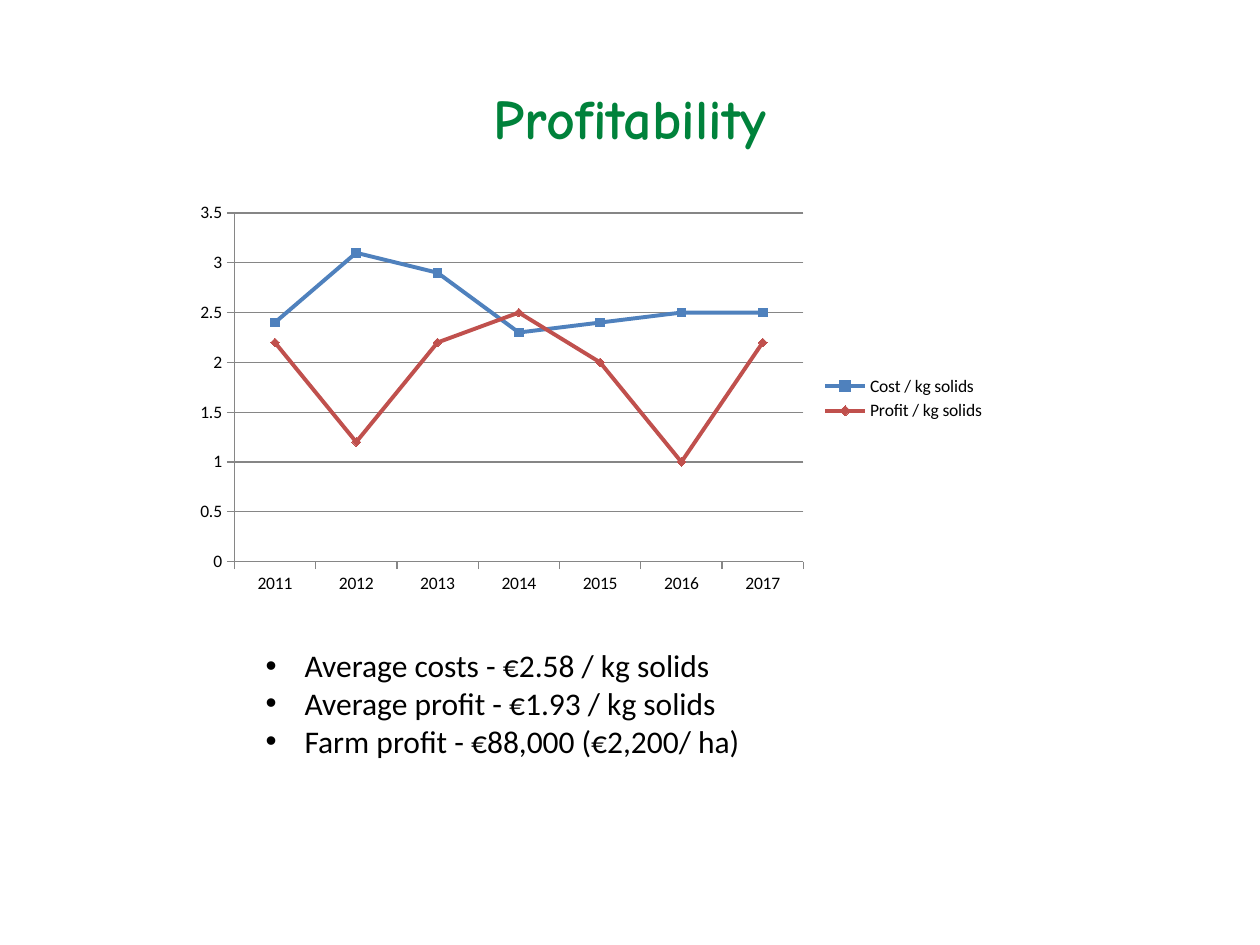
import pptx
import pptx.chart.data
import pptx.dml.color
import pptx.enum.chart
import pptx.enum.text
import pptx.util
import lxml.etree

TITLE = "Profitability"
NOTES = [
    "Average costs - €2.58 / kg solids",
    "Average profit - €1.93 / kg solids",
    "Farm profit - €88,000 (€2,200/ ha)",
]
YEARS = ["2011", "2012", "2013", "2014", "2015", "2016", "2017"]
SERIES = [
    ("Cost / kg solids", "4F81BD", "SQUARE", [2.4, 3.1, 2.9, 2.3, 2.4, 2.5, 2.5]),
    ("Profit / kg solids", "C0504D", "DIAMOND", [2.2, 1.2, 2.2, 2.5, 2, 1, 2.2]),
]
GREEN, BLACK, GRAY = "00823B", "000000", "868686"
SCALE = 914400 // 126
INDENT = 39


def px(n):
    return pptx.util.Emu(n * SCALE)


def tint(text):
    return pptx.dml.color.RGBColor.from_string(text)


def place(shape, left, top, width, height):
    shape.left, shape.top = px(left), px(top)
    shape.width, shape.height = px(width), px(height)


def style(font, name, size, color, bold=False):
    font.name, font.size, font.bold = name, pptx.util.Pt(size), bold
    font.color.rgb = tint(color)


def stroke(line, color, width):
    line.color.rgb = tint(color)
    line.width = pptx.util.Pt(width)


def bullet(para):
    props = para._p.get_or_add_pPr()
    props.set("marL", str(px(INDENT)))
    props.set("indent", str(-px(INDENT)))
    space = "{http://schemas.openxmlformats.org/drawingml/2006/main}"
    lxml.etree.SubElement(props, space + "buFont").set("typeface", "Arial")
    lxml.etree.SubElement(props, space + "buChar").set("char", "•")


def add_title(slide):
    title = slide.shapes.title
    place(title, 63, 38, 1134, 158)
    frame = title.text_frame
    frame.text = TITLE
    frame.vertical_anchor = pptx.enum.text.MSO_ANCHOR.MIDDLE
    para = frame.paragraphs[0]
    para.alignment = pptx.enum.text.PP_ALIGN.CENTER
    style(para.runs[0].font, "Comic Neue", 32, GREEN, True)


def add_notes(slide):
    body = slide.placeholders[1]
    place(body, 253, 640, 505, 165)
    frame = body.text_frame
    frame.text = "\n".join(NOTES)
    frame.word_wrap = True
    frame.auto_size = pptx.enum.text.MSO_AUTO_SIZE.NONE
    for para in frame.paragraphs:
        para.space_before = pptx.util.Pt(0)
        bullet(para)
        style(para.runs[0].font, "Calibri", 18, BLACK)


def add_graph(slide):
    data = pptx.chart.data.CategoryChartData()
    data.categories = YEARS
    for name, color, mark, vals in SERIES:
        data.add_series(name, vals)
    kind = pptx.enum.chart.XL_CHART_TYPE.LINE_MARKERS
    chart = slide.shapes.add_chart(
        kind, px(184), px(195), px(814), px(407), data).chart
    chart.has_title = False
    style(chart.font, "Calibri", 10, BLACK)
    chart.has_legend = True
    chart.legend.position = pptx.enum.chart.XL_LEGEND_POSITION.RIGHT
    chart.legend.include_in_layout = False
    for axis in (chart.category_axis, chart.value_axis):
        axis.major_tick_mark = pptx.enum.chart.XL_TICK_MARK.OUTSIDE
        stroke(axis.format.line, GRAY, 0.75)
    scale = chart.value_axis
    scale.minimum_scale, scale.maximum_scale, scale.major_unit = 0, 3.5, 0.5
    stroke(scale.major_gridlines.format.line, GRAY, 0.75)
    for line, (name, color, mark, vals) in zip(chart.plots[0].series, SERIES):
        line.smooth = False
        stroke(line.format.line, color, 2.25)
        line.marker.style = pptx.enum.chart.XL_MARKER_STYLE[mark]
        line.marker.size = 5
        line.marker.format.fill.solid()
        line.marker.format.fill.fore_color.rgb = tint(color)
        stroke(line.marker.format.line, color, 0.75)


def main():
    deck = pptx.Presentation()
    deck.slide_width, deck.slide_height = px(1260), px(945)
    slide = deck.slides.add_slide(deck.slide_layouts[1])
    add_title(slide)
    add_notes(slide)
    add_graph(slide)
    deck.save("out.pptx")


if __name__ == "__main__":
    main()
